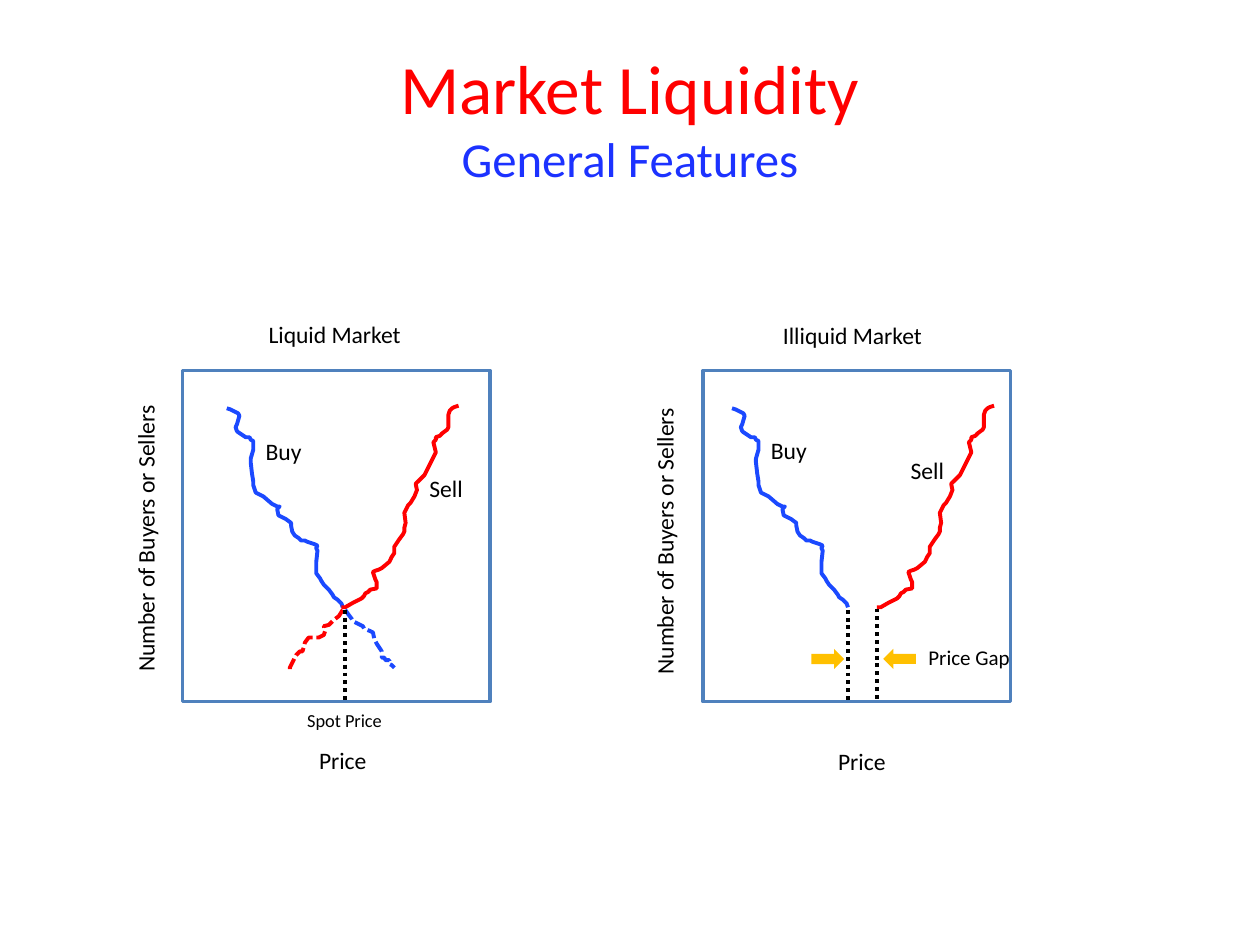
"""Build the Market Liquidity slide with a liquid and an illiquid market diagram."""
from lxml import etree
from pptx import Presentation
from pptx import util as u
from pptx.dml.color import RGBColor
from pptx.enum import dml, shapes, text
from pptx.oxml.ns import qn

RED, BLUE, CURVE_BLUE, BLACK = "FF0000", "1C32FF", "1B49FF", "000000"
FRAME, GOLD = "4F81BD", "FFC000"
LEFT, CENTER, RIGHT = text.PP_ALIGN.LEFT, text.PP_ALIGN.CENTER, text.PP_ALIGN.RIGHT
DASH, DOT = dml.MSO_LINE.SQUARE_DOT, dml.MSO_LINE.ROUND_DOT

BUY = [
    (180, 324), (183, 325), (187, 327), (189, 328), (190, 330), (188, 337),
    (187, 339), (188, 342), (189, 343), (195, 347), (198, 347), (199, 349),
    (201, 350), (201, 357), (199, 364), (199, 367), (200, 376), (201, 382),
    (201, 385), (203, 391), (205, 392), (207, 393), (209, 394), (216, 400),
    (220, 402), (222, 402), (220, 404), (221, 409), (227, 412), (231, 415),
    (231, 417), (232, 422), (234, 425), (237, 427), (239, 429), (242, 429),
    (244, 430), (250, 432), (252, 433), (251, 435), (252, 437), (251, 446),
    (251, 455), (254, 459), (255, 461), (257, 464), (259, 466), (261, 468),
    (264, 472), (265, 474), (268, 476), (271, 479), (272, 482),
]
SELL = [
    (364, 322), (361, 323), (359, 324), (357, 326), (356, 329), (356, 339),
    (355, 341), (351, 344), (349, 346), (346, 347), (346, 349), (344, 351),
    (346, 359), (344, 363), (343, 365), (341, 369), (339, 373), (338, 375),
    (337, 377), (334, 380), (330, 384), (331, 389), (329, 394), (326, 399),
    (324, 401), (322, 405), (321, 407), (322, 415), (321, 419), (321, 422),
    (320, 424), (317, 428), (313, 434), (313, 439), (311, 442), (309, 446),
    (303, 451), (301, 452), (298, 453), (296, 454), (298, 460), (299, 462),
    (299, 467), (294, 468), (292, 470), (290, 471), (289, 473), (287, 475),
    (281, 478), (274, 482), (271, 482),
]
SELL_TAIL = [
    (272, 484), (269, 489), (265, 492), (261, 496), (257, 497), (258, 501),
    (257, 504), (253, 506), (245, 506), (242, 510), (241, 514), (240, 517),
    (238, 517), (235, 520), (234, 522), (233, 524), (230, 530), (230, 531),
]
BUY_TAIL = [
    (274, 484), (276, 487), (279, 491), (280, 493), (286, 496), (288, 497),
    (289, 499), (294, 501), (296, 502), (297, 507), (298, 509), (299, 511),
    (301, 514), (303, 517), (303, 522), (305, 522), (306, 524), (309, 524),
    (309, 527), (311, 528), (313, 530),
]


def rgb(value):
    return RGBColor.from_string(value)


def add_text(box, runs, align=CENTER, rotation=0):
    sp = s.shapes.add_textbox(*map(u.Inches, box))
    sp.rotation = rotation
    tf = sp.text_frame
    tf.word_wrap = rotation == 0
    tf.auto_size = text.MSO_AUTO_SIZE.SHAPE_TO_FIT_TEXT
    p = tf.paragraphs[0]
    p.alignment = align
    for i, (words, size, color) in enumerate(runs):
        if i:
            p.add_line_break()
        r = p.add_run()
        r.text = words
        r.font.name = "Calibri"
        r.font.size = u.Pt(size)
        r.font.color.rgb = rgb(color)
    return sp


prs = Presentation()
prs.slide_width, prs.slide_height = u.Inches(10), u.Inches(7.5)
s = prs.slides.add_slide(prs.slide_layouts[6])

title = add_text((0.5, 0.3, 9, 1.25), [("Market Liquidity", 39.6, RED), ("General Features", 27.9, BLUE)])
title.text_frame.auto_size = text.MSO_AUTO_SIZE.NONE
title.text_frame.vertical_anchor = text.MSO_ANCHOR.MIDDLE

for x in (1.45, 5.58):
    sp = s.shapes.add_shape(shapes.MSO_SHAPE.RECTANGLE, u.Inches(x), u.Inches(2.94), u.Inches(2.44), u.Inches(2.63))
    sp.shadow.inherit = False
    sp.fill.background()
    sp.line.color.rgb = rgb(FRAME)
    sp.line.width = u.Pt(2)

for points, shift, color, dash in (
    (BUY, 0, CURVE_BLUE, None),
    (SELL, 0, RED, None),
    (SELL_TAIL, 0, RED, DASH),
    (BUY_TAIL, 0, CURVE_BLUE, DASH),
    (BUY, 4.01, CURVE_BLUE, None),
    (SELL, 4.25, RED, None),
):
    builder = s.shapes.build_freeform(*points[0], scale=u.Inches(0.01))
    builder.add_line_segments(points[1:], close=False)
    sp = builder.convert_to_shape(u.Inches(shift), 0)
    sp.shadow.inherit = False
    sp.fill.background()
    sp.line.color.rgb = rgb(color)
    sp.line.width = u.Pt(2.25)
    if dash:
        sp.line.dash_style = dash

for x, y in ((2.74, 4.84), (6.73, 4.84), (6.96, 4.83)):
    line = s.shapes.add_connector(
        shapes.MSO_CONNECTOR.STRAIGHT, u.Inches(x), u.Inches(y), u.Inches(x), u.Inches(y + 0.73))
    line.line.color.rgb = rgb(BLACK)
    line.line.width = u.Pt(2.25)
    line.line.dash_style = DOT
    etree.SubElement(line._element.spPr, qn("a:effectLst"))

for x, rotation in ((7.01, 0), (6.44, 180)):
    sp = s.shapes.add_shape(shapes.MSO_SHAPE.LEFT_ARROW, u.Inches(x), u.Inches(5.15), u.Inches(0.26), u.Inches(0.16))
    sp.rotation = rotation
    sp.shadow.inherit = False
    sp.fill.solid()
    sp.fill.fore_color.rgb = rgb(GOLD)
    sp.line.fill.background()

for words, box, size, align, rotation in (
    ("Liquid Market", (1.45, 2.49, 2.41, 0.33), 13.5, CENTER, 0),
    ("Illiquid Market", (5.56, 2.5, 2.41, 0.33), 13.5, CENTER, 0),
    ("Number of Buyers or Sellers", (-0.02, 4.09, 2.35, 0.33), 13.5, LEFT, 270),
    ("Number of Buyers or Sellers", (4.1, 4.11, 2.35, 0.33), 13.5, LEFT, 270),
    ("Price", (1.68, 5.87, 2.08, 0.33), 13.5, CENTER, 0),
    ("Price", (5.8, 5.88, 2.08, 0.33), 13.5, CENTER, 0),
    ("Buy", (2.01, 3.42, 0.55, 0.33), 13.5, LEFT, 0),
    ("Buy", (6.02, 3.41, 0.55, 0.33), 13.5, LEFT, 0),
    ("Sell", (3.31, 3.71, 0.55, 0.33), 13.5, LEFT, 0),
    ("Sell", (7.04, 3.57, 0.55, 0.33), 13.5, RIGHT, 0),
    ("Spot Price", (2.2, 5.58, 1.07, 0.28), 10.5, CENTER, 0),
    ("Price Gap", (7.27, 5.07, 0.92, 0.3), 12, LEFT, 0),
):
    add_text(box, [(words, size, BLACK)], align, rotation)

prs.save("out.pptx")
